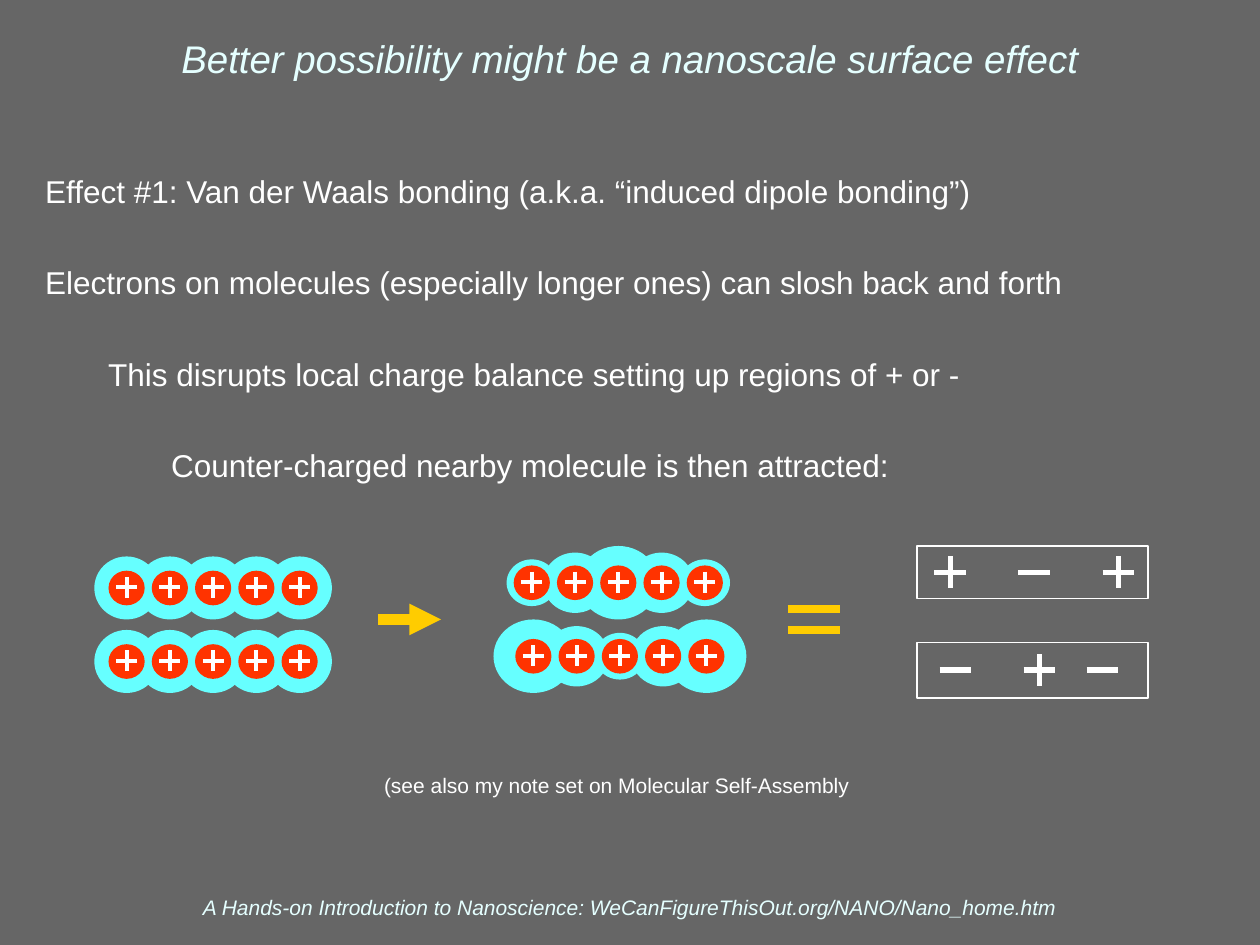
from lxml.etree import SubElement
from pptx import Presentation
from pptx.dml.color import RGBColor
from pptx.enum.shapes import MSO_CONNECTOR, MSO_SHAPE
from pptx.enum.text import MSO_ANCHOR, PP_ALIGN
from pptx.oxml.ns import qn
from pptx.util import Inches, Pt

WHITE, PALE, GOLD = "FFFFFF", "E5FFFF", "FFCC00"
CYAN, RED, GRAY = "66FFFF", "FF3300", "666666"


def color(code):
    return RGBColor.from_string(code)


def write(frame, lines, size=18, fill=WHITE, italic=False,
          align=PP_ALIGN.LEFT, gap=0):
    """Fill a frame with (text, indent in inches) lines."""
    for i, (text, indent) in enumerate(lines):
        para = frame.paragraphs[0] if i == 0 else frame.add_paragraph()
        para.text = text
        para.alignment = align
        para.space_before = Pt(gap if i else 0)
        if indent:
            props = para._p.get_or_add_pPr()
            props.set("marL", str(Inches(indent)))
            props.set("indent", "0")
        font = para.font
        font.name, font.size, font.italic = "Arial", Pt(size), italic
        font.color.rgb = color(fill)


class Board:
    """Slide on a grid of 120 columns by 90 rows."""

    def __init__(self, deck):
        self.cell = deck.slide_width / 120
        self.slide = deck.slides.add_slide(deck.slide_layouts[6])
        back = self.slide.background.fill
        back.solid()
        back.fore_color.rgb = color(GRAY)
        self.shapes = self.slide.shapes

    def grid(self, *cells):
        return [round(c * self.cell) for c in cells]

    def group(self):
        return self.shapes.add_group_shape().shapes

    def text(self, box, lines, anchor=MSO_ANCHOR.TOP, wrap=True, **style):
        frame = self.shapes.add_textbox(*self.grid(*box)).text_frame
        frame.word_wrap = wrap
        frame.vertical_anchor = anchor
        frame.margin_left = frame.margin_right = Inches(0.05)
        frame.margin_top = frame.margin_bottom = Inches(0.05)
        write(frame, lines, **style)

    def line(self, ends, fill=WHITE, width=3, arrow=False, on=None):
        home = self.shapes if on is None else on
        link = home.add_connector(MSO_CONNECTOR.STRAIGHT, *self.grid(*ends))
        link.line.color.rgb = color(fill)
        link.line.width = Pt(width)
        props = link._element.spPr
        if arrow:
            SubElement(props.find(qn("a:ln")), qn("a:tailEnd"), type="triangle")
        SubElement(props, qn("a:effectLst"))

    def oval(self, x, y, size, fill, on):
        w, h = size
        shape = on.add_shape(MSO_SHAPE.OVAL,
                             *self.grid(x - w / 2, y - h / 2, w, h))
        shape.shadow.inherit = False
        shape.fill.solid()
        shape.fill.fore_color.rgb = color(fill)
        shape.line.fill.background()

    def frame(self, box, on):
        shape = on.add_shape(MSO_SHAPE.RECTANGLE, *self.grid(*box))
        shape.shadow.inherit = False
        shape.fill.background()
        shape.line.color.rgb = color(WHITE)
        shape.line.width = Pt(1)

    def minus(self, x, y, on, arm=1.5, width=3):
        self.line((x - arm, y, x + arm, y), width=width, on=on)

    def plus(self, x, y, on, arm=1.5, width=3):
        self.minus(x, y, on, arm, width)
        self.line((x, y - arm, x, y + arm), width=width, on=on)

    def chain(self, x, y, clouds):
        """Row of nuclei, each inside its own electron cloud."""
        on = self.group()
        spots = [x + 4.12 * i for i in range(len(clouds))]
        for spot, cloud in zip(spots, clouds):
            self.oval(spot, y, cloud, CYAN, on)
        for spot in spots:
            self.oval(spot, y, (3.45, 3.3), RED, on)
            self.plus(spot, y - 0.05, on, arm=1, width=2.25)


def main():
    deck = Presentation()
    deck.slide_width, deck.slide_height = Inches(10), Inches(7.5)
    board = Board(deck)

    # Title, body, note and footer
    mid = PP_ALIGN.CENTER
    board.text((3, 0, 114, 11),
               [("Better possibility might be a nanoscale surface effect", 0)],
               anchor=MSO_ANCHOR.MIDDLE, size=22, fill=PALE, italic=True,
               align=mid)
    board.text((3.7, 15.8, 112, 32.2), [
        ("Effect #1: Van der Waals bonding (a.k.a. “induced dipole bonding”)", 0),
        ("Electrons on molecules (especially longer ones) can slosh back and forth", 0),
        ("This disrupts local charge balance setting up regions of + or -", 0.5),
        ("Counter-charged nearby molecule is then attracted:", 1),
    ], gap=30.6)
    board.text((35.9, 73, 45.7, 3.5),
               [("(see also my note set on Molecular Self-Assembly", 0)],
               wrap=False, size=12, align=mid)
    board.text((4, 84.7, 112, 3.5),
               [("A Hands-on Introduction to Nanoscience: "
                 "WeCanFigureThisOut.org/NANO/Nano_home.htm", 0)],
               anchor=MSO_ANCHOR.BOTTOM, size=12, fill=PALE, italic=True,
               align=mid)

    # Balanced molecules, then the same pair with shifted electrons
    even = (6.15, 6)
    small, middle, large = (4.8, 4.45), (6.1, 5.75), (7.6, 7)
    for y in (56, 63):
        board.chain(12.06, y, [even] * 5)
    board.chain(50.65, 55.5, [small, middle, large, middle, small])
    board.chain(50.8, 62.5, [large, middle, small, middle, large])

    # Arrow and equals sign
    board.line((36, 59, 42, 59), GOLD, 6, arrow=True)
    for y in (58, 60):
        board.line((75, y, 80, y), GOLD, 4.5)

    # Net charges
    net = board.group()
    board.frame((87.3, 52, 22, 5), net)
    board.frame((87.3, 61.2, 22, 5.3), net)
    for sign, x, y in ((board.plus, 90.5, 54.5), (board.minus, 98.5, 54.5),
                       (board.plus, 106.5, 54.5), (board.minus, 91, 63.8),
                       (board.plus, 99, 63.8), (board.minus, 105, 63.8)):
        sign(x, y, net)

    deck.save("out.pptx")


if __name__ == "__main__":
    main()
